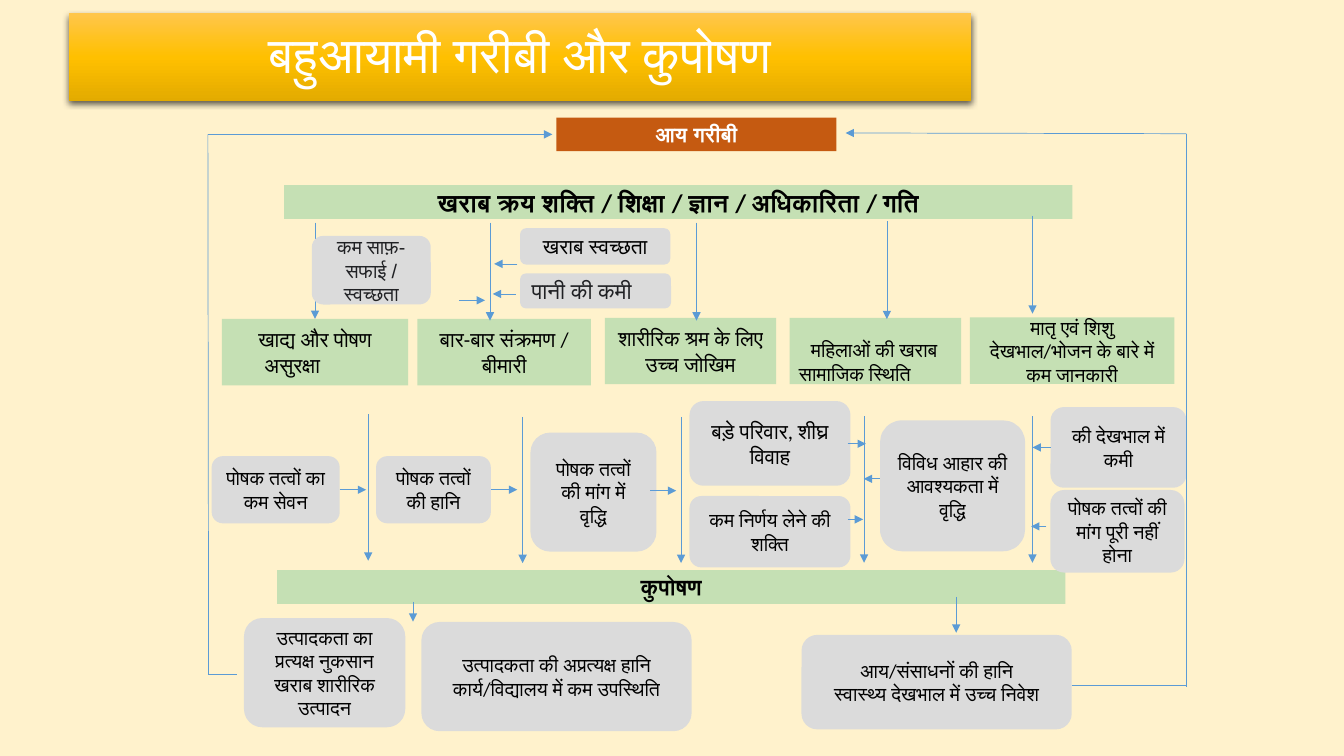
from dataclasses import dataclass

from lxml.etree import SubElement
from pptx import Presentation
from pptx.dml.color import RGBColor
from pptx.enum.shapes import MSO_CONNECTOR as Connector, MSO_SHAPE as Geometry
from pptx.enum.text import MSO_ANCHOR as Anchor, MSO_AUTO_SIZE as AutoSize, PP_ALIGN as Align
from pptx.oxml import parse_xml
from pptx.oxml.ns import nsdecls, qn
from pptx.shapes.autoshape import Shape
from pptx.slide import Slide
from pptx.text.text import _Paragraph as Paragraph
from pptx.util import Pt

COLORS = {
    "background": "FFF2CC",
    "green": "C5E0B4",
    "grey": "DBDBDB",
    "orange": "C55A11",
    "line": "5B9BD5",
    "black": "000000",
    "charcoal": "202124",
    "white": "FFFFFF",
    "gold_light": "FFC64B",
    "gold": "FFC000",
    "gold_dark": "E3AB00",
}
TOP, LEFT, RIGHT = 0, 1, 3


@dataclass(frozen=True)
class Box:
    name: str
    frame: tuple[float, float, float, float]
    lines: tuple[str, ...]
    size: float = 14
    fill: str = "grey"
    color: str = "black"
    font: str = "Calibri"
    bold: bool = False
    align: Align = Align.CENTER
    anchor: Anchor = Anchor.MIDDLE
    inset: float = 7.2
    top_inset: float = 3.6
    margin: float = 0
    indent: float = 0


@dataclass(frozen=True)
class Link:
    start: tuple[float, float]
    end: tuple[float, float]
    arrow: bool = True
    source: tuple[str, int] | None = None
    target: tuple[str, int] | None = None


BOXES = [
    Box("purchasing", (203, 132.3, 563, 24), ("खराब क्रय शक्ति / शिक्षा / ज्ञान / अधिकारिता / गति",),
        18, "green", bold=True),
    Box("malnutrition", (198, 407.3, 563, 24), ("कुपोषण",), 16, "green", bold=True),
    Box("income", (397.5, 84, 200, 24), ("आय गरीबी",), 15, "orange", "white", bold=True),
    Box("direct loss", (174.3, 441.5, 115.2, 78), ("उत्पादकता का प्रत्यक्ष नुकसान", "खराब शारीरिक उत्पादन")),
    Box("indirect loss", (301, 444.3, 193, 78), ("उत्पादकता की अप्रत्यक्ष हानि कार्य/विद्यालय में कम उपस्थिति",)),
    Box("resources", (572.5, 453.5, 193, 67.5), ("आय/संसाधनों की हानि", "स्वास्थ्य देखभाल में उच्च निवेश")),
    Box("intake", (151.2, 325.8, 91.5, 48), ("पोषक तत्वों का कम सेवन",)),
    Box("nutrient loss", (268.6, 325.8, 82, 48), ("पोषक तत्वों की हानि",)),
    Box("demand", (378.9, 309, 90, 85), ("पोषक तत्वों की मांग में वृद्धि",)),
    Box("decisions", (492.5, 354.3, 115, 51), ("कम निर्णय लेने की शक्ति",)),
    Box("family", (492.5, 286.5, 115, 60.5), ("बड़े परिवार, शीघ्र विवाह",), 15),
    Box("care", (750.4, 290.8, 97.2, 57.6), ("की देखभाल में कमी",)),
    Box("diet", (628.6, 300.3, 103.6, 93.5), ("विविध आहार की आवश्यकता में वृद्धि",)),
    Box("unmet demand", (750.3, 350, 95.8, 59), ("पोषक तत्वों की मांग पूरी नहीं होना",)),
    Box("food", (158.5, 227.8, 133, 47.5), ("खाद्य और पोषण असुरक्षा",), 15, "green",
        align=Align.LEFT, inset=26, margin=4.3, indent=-4.3),
    Box("infection", (298.2, 227.8, 124, 47.5), ("बार-बार संक्रमण / बीमारी",), 15, "green"),
    Box("labour", (432, 227, 122.5, 47.5), ("शारीरिक श्रम के लिए उच्च जोखिम",), 15, "green"),
    Box("women", (564, 227, 122.5, 47.5), ("महिलाओं की खराब सामाजिक स्थिति",), 14, "green",
        align=Align.LEFT, anchor=Anchor.TOP, inset=6.7, top_inset=14.6, indent=8.6),
    Box("knowledge", (692.8, 226.8, 146, 47.5), ("मातृ एवं शिशु देखभाल/भोजन के बारे में कम जानकारी",),
        14, "green"),
    Box("sanitation", (371.5, 163, 107.3, 26), ("खराब स्वच्छता",), 15),
    Box("water", (371.5, 195.3, 107.8, 25), ("पानी की कमी",), 16, color="charcoal", font="Roboto",
        align=Align.LEFT),
]
HYGIENE = Box("hygiene", (222.7, 168.5, 85, 49), ("कम साफ़-सफाई / स्वच्छता",), color="charcoal", font="Arial")

CAUSE_ARROWS = [(350, 159), (497.5, 159), (633.5, 158), (737.5, 154)]
EFFECT_ARROWS = [(263, 296), (373.3, 297.7), (486.5, 297.7), (617.2, 297.5), (737.5, 297.5)]
LINKS = [
    Link((225, 159), (225, 227.8), target=("food", TOP)),
    *(Link((x, y), (x, y + 70)) for x, y in CAUSE_ARROWS),
    *(Link((x, y), (x, y + 104.5)) for x, y in EFFECT_ARROWS),
    Link((295, 430), (295, 444)),
    Link((683, 426.3), (683, 452)),
    Link((148.5, 96), (149, 482), arrow=False),
    Link((847.5, 95.5), (847.5, 490.5), arrow=False),
    Link((148.5, 482), (169, 482), arrow=False),
    Link((765.5, 489.6), (847.5, 489.6), arrow=False),
    Link((847.5, 95.5), (604, 95)),
    Link((148.5, 96), (394.5, 96)),
    Link((242.7, 349.8), (261.5, 349.8), source=("intake", RIGHT)),
    Link((350.6, 349.8), (369.5, 349.8), source=("nutrient loss", RIGHT)),
    Link((464.5, 350.5), (483, 350.5)),
    Link((605.5, 317), (618.5, 317)),
    Link((605.5, 371), (616.5, 371)),
    Link((747.5, 376), (736.5, 376)),
    Link((628.5, 342), (617, 342)),
    Link((750.4, 319.6), (737.5, 319.6), source=("care", LEFT)),
    Link((369.5, 188.5), (353, 188.5)),
    Link((368.5, 210), (352, 210)),
    Link((327.8, 214.5), (346.5, 214.5)),
]


def rgb(name: str) -> RGBColor:
    return RGBColor.from_string(COLORS[name])


def add_text(paragraph: Paragraph, text: str, box: Box) -> None:
    paragraph.alignment = box.align
    if box.indent:
        properties = paragraph._p.get_or_add_pPr()
        properties.set("marL", str(Pt(box.margin)))
        properties.set("indent", str(Pt(box.indent)))
    run = paragraph.add_run()
    run.text = text
    run.font.name = box.font
    run.font.size = Pt(box.size)
    run.font.bold = box.bold
    run.font.color.rgb = rgb(box.color)


def draw_box(slide: Slide, box: Box) -> Shape:
    geometry = Geometry.ROUNDED_RECTANGLE if box.fill == "grey" else Geometry.RECTANGLE
    shape = slide.shapes.add_shape(geometry, *map(Pt, box.frame))
    shape.shadow.inherit = False
    shape.fill.solid()
    shape.fill.fore_color.rgb = rgb(box.fill)
    shape.line.fill.background()
    frame = shape.text_frame
    frame.word_wrap = True
    frame.vertical_anchor = box.anchor
    frame.margin_left = Pt(box.inset)
    frame.margin_top = Pt(box.top_inset)
    for index, text in enumerate(box.lines):
        paragraph = frame.add_paragraph() if index else frame.paragraphs[0]
        add_text(paragraph, text, box)
    return shape


def draw_link(slide: Slide, link: Link, shapes: dict[str, Shape]) -> None:
    connector = slide.shapes.add_connector(Connector.STRAIGHT, *map(Pt, link.start + link.end))
    connector.line.color.rgb = rgb("line")
    connector.line.width = Pt(0.5)
    if link.arrow:
        SubElement(connector.line._get_or_add_ln(), qn("a:tailEnd"), type="triangle")
    SubElement(connector._element.spPr, qn("a:effectLst"))
    if link.source:
        connector.begin_connect(shapes[link.source[0]], link.source[1])
    if link.target:
        connector.end_connect(shapes[link.target[0]], link.target[1])


def draw_title(slide: Slide) -> None:
    box = Box("title", (49, 9.5, 644.5, 62.5), ("बहुआयामी गरीबी और कुपोषण",), 36, color="white")
    title = slide.shapes.title
    title.left, title.top, title.width, title.height = map(Pt, box.frame)
    stops = "".join(
        f'<a:gs pos="{position}"><a:srgbClr val="{COLORS[name]}"/></a:gs>'
        for position, name in ((0, "gold_light"), (50000, "gold"), (100000, "gold_dark"))
    )
    properties = title._element.spPr
    properties.append(parse_xml(
        f'<a:gradFill {nsdecls("a")} rotWithShape="1"><a:gsLst>{stops}</a:gsLst>'
        '<a:lin ang="5400000" scaled="0"/></a:gradFill>'
    ))
    properties.append(parse_xml(
        f'<a:effectLst {nsdecls("a")}><a:outerShdw blurRad="{Pt(4.5)}" dist="{Pt(1.5)}" dir="5400000">'
        f'<a:srgbClr val="{COLORS["black"]}"><a:alpha val="63000"/></a:srgbClr></a:outerShdw></a:effectLst>'
    ))
    frame = title.text_frame
    frame.auto_size = AutoSize.NONE
    frame.word_wrap = True
    frame.vertical_anchor = box.anchor
    frame.paragraphs[0].line_spacing = 0.9
    add_text(frame.paragraphs[0], box.lines[0], box)


def main() -> None:
    presentation = Presentation()
    presentation.slide_width, presentation.slide_height = Pt(960), Pt(540)
    slide = presentation.slides.add_slide(presentation.slide_layouts[5])
    slide.background.fill.solid()
    slide.background.fill.fore_color.rgb = rgb("background")
    draw_title(slide)
    shapes = {box.name: draw_box(slide, box) for box in BOXES}
    for link in LINKS:
        draw_link(slide, link, shapes)
    draw_box(slide, HYGIENE)
    presentation.save("out.pptx")


if __name__ == "__main__":
    main()
